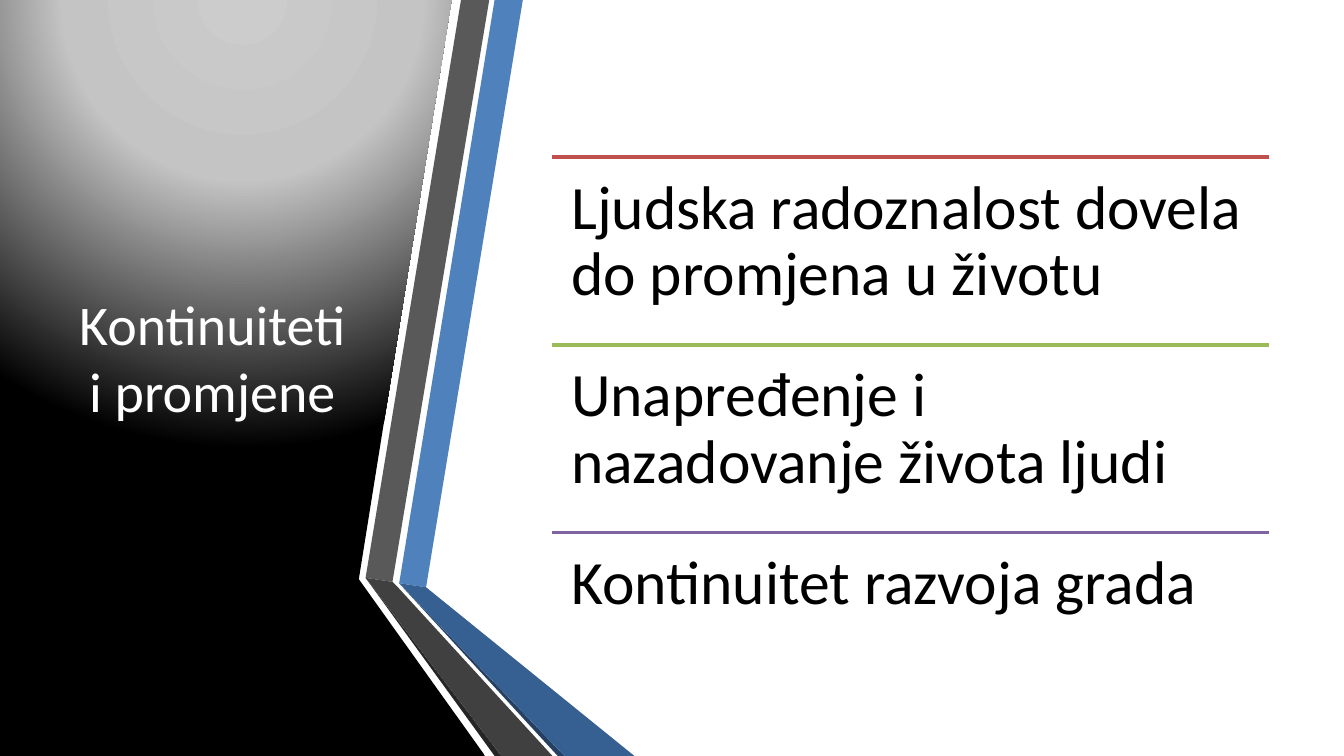
from dataclasses import dataclass

from lxml import etree
from pptx import Presentation
from pptx.dml.color import RGBColor
from pptx.enum import shapes, text
from pptx.oxml import parse_xml
from pptx.oxml.ns import nsdecls, qn
from pptx.util import Inches, Pt

Point = tuple[float, float]


@dataclass(frozen=True)
class Theme:
    font: str = "Calibri"
    title_size: float = 30
    item_size: float = 33
    rule_width: float = 2
    title_color: str = "FFFFFF"
    item_color: str = "000000"
    glow: tuple[tuple[int, str], ...] = ((0, "CCCCCC"), (40, "C4C4C4"), (100, "000000"))
    blue: str = "4F81BD"
    blue_fold: str = "376092"
    blue_edge: str = "254061"
    gray: str = "595959"
    gray_fold: str = "404040"
    gray_edge: str = "262626"
    red: str = "C0504D"
    green: str = "9BBB59"
    purple: str = "8064A2"


@dataclass(frozen=True)
class Facet:
    color: str
    points: tuple[Point, ...]


@dataclass(frozen=True)
class Item:
    color: str
    label: str


THEME = Theme()
WIDTH = 10
HEIGHT = WIDTH * 9 / 16
LIST_LEFT, LIST_TOP, LIST_WIDTH, LIST_HEIGHT = 4.11, 1.17, 5.33, 4.19
INSET = 0.14

PANEL = ((2.64, 0), (3.36, 0), (2.67, 4.31), (3.61, HEIGHT), (0, HEIGHT), (0, 0))
GRAY_BEND, BLUE_BEND = (2.72, 4.3), (2.97, 4.34)
FACETS = (
    Facet(THEME.blue, (BLUE_BEND, (3.17, 4.37), (3.89, 0), (3.68, 0))),
    Facet(THEME.gray, ((3.64, 0), (3.43, 0), GRAY_BEND, (2.92, 4.33))),
    Facet(THEME.gray_edge, (GRAY_BEND, (3.68, HEIGHT), (3.73, HEIGHT))),
    Facet(THEME.blue_edge, (BLUE_BEND, (4.15, HEIGHT), (4.2, HEIGHT))),
    Facet(THEME.blue_fold, (BLUE_BEND, (4.2, HEIGHT), (4.72, HEIGHT), (3.17, 4.37))),
    Facet(THEME.gray_fold, ((4.11, HEIGHT), (2.96, 4.37), (2.92, 4.33), GRAY_BEND, (3.73, HEIGHT))),
)
ITEMS = (
    Item(THEME.red, "Ljudska radoznalost dovela do promjena u životu"),
    Item(THEME.green, "Unapređenje i nazadovanje života ljudi"),
    Item(THEME.purple, "Kontinuitet razvoja grada"),
)
ROW_HEIGHT = LIST_HEIGHT / len(ITEMS)


def add_outline(slide, points: tuple[Point, ...]):
    start, *rest = [(Inches(x), Inches(y)) for x, y in points]
    builder = slide.shapes.build_freeform(*start)
    builder.add_line_segments(rest, close=True)
    sp = builder.convert_to_shape()
    sp.shadow.inherit = False
    sp.line.fill.background()
    return sp


def add_facet(slide, facet: Facet) -> None:
    sp = add_outline(slide, facet.points)
    sp.fill.solid()
    sp.fill.fore_color.rgb = RGBColor.from_string(facet.color)


def add_panel(slide) -> None:
    sp = add_outline(slide, PANEL)
    stops = "".join(
        f'<a:gs pos="{pos * 1000}"><a:srgbClr val="{color}"/></a:gs>'
        for pos, color in THEME.glow
    )
    gradient = parse_xml(
        f'<a:gradFill {nsdecls("a")} rotWithShape="1"><a:gsLst>{stops}</a:gsLst>'
        '<a:path path="circle">'
        '<a:fillToRect l="50000" t="-80000" r="50000" b="180000"/>'
        "</a:path></a:gradFill>"
    )
    sp._element.spPr.find(qn("a:custGeom")).addnext(gradient)


def place(sp, left: float, top: float, width: float, height: float) -> None:
    sp.left, sp.top = Inches(left), Inches(top)
    sp.width, sp.height = Inches(width), Inches(height)


def write_text(tf, content: str, *, size: float, color: str, align, anchor,
               spacing: float = 1.0, inset: float | None = None) -> None:
    tf.word_wrap = True
    tf.auto_size = text.MSO_AUTO_SIZE.NONE
    tf.vertical_anchor = anchor
    if inset is not None:
        tf.margin_left = tf.margin_right = Inches(inset)
        tf.margin_top = tf.margin_bottom = Inches(inset)
    p = tf.paragraphs[0]
    p.alignment = align
    p.line_spacing = spacing
    r = p.add_run()
    r.text = content
    r.font.name = THEME.font
    r.font.size = Pt(size)
    r.font.color.rgb = RGBColor.from_string(color)


def add_item(slide, item: Item, top: float) -> None:
    left, y, right = Inches(LIST_LEFT), Inches(top), Inches(LIST_LEFT + LIST_WIDTH)
    rule = slide.shapes.add_connector(shapes.MSO_CONNECTOR.STRAIGHT, left, y, right, y)
    rule.line.color.rgb = RGBColor.from_string(item.color)
    rule.line.width = Pt(THEME.rule_width)
    etree.SubElement(rule._element.spPr, qn("a:effectLst"))
    box = slide.shapes.add_textbox(left, y, Inches(LIST_WIDTH), Inches(ROW_HEIGHT))
    write_text(box.text_frame, item.label, size=THEME.item_size, color=THEME.item_color,
               align=text.PP_ALIGN.LEFT, anchor=text.MSO_ANCHOR.TOP,
               spacing=0.9, inset=INSET)


def main() -> None:
    prs = Presentation()
    prs.slide_width, prs.slide_height = Inches(WIDTH), Inches(HEIGHT)
    slide = prs.slides.add_slide(prs.slide_layouts[5])
    title = slide.shapes.title
    add_panel(slide)
    for facet in FACETS:
        add_facet(slide, facet)
    slide.shapes._spTree.append(title._element)
    place(title, 0.44, 0.56, 2.28, 4.19)
    write_text(title.text_frame, "Kontinuiteti i promjene", size=THEME.title_size,
               color=THEME.title_color, align=text.PP_ALIGN.CENTER,
               anchor=text.MSO_ANCHOR.MIDDLE)
    for row, item in enumerate(ITEMS):
        add_item(slide, item, LIST_TOP + row * ROW_HEIGHT)
    prs.save("out.pptx")


if __name__ == "__main__":
    main()
